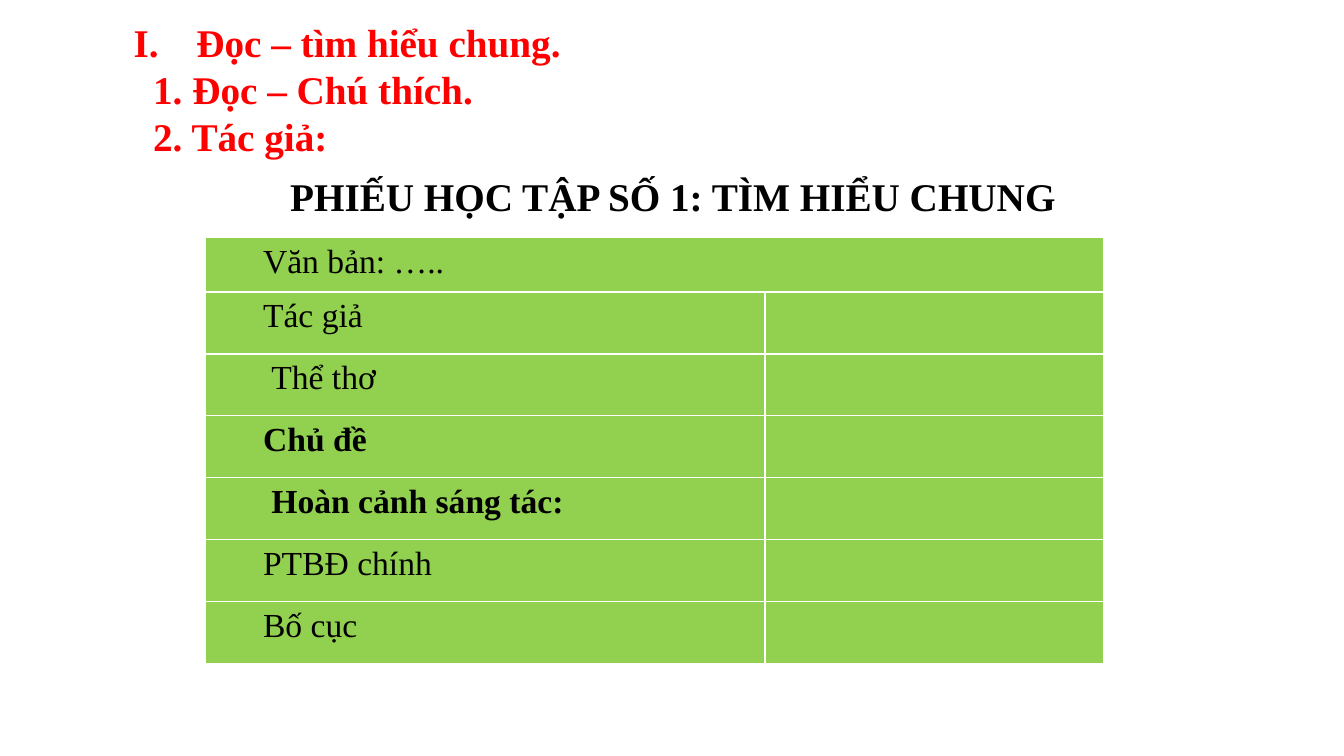
from lxml.etree import SubElement
from pptx import Presentation
from pptx.dml.color import RGBColor
from pptx.enum.text import MSO_ANCHOR as Anchor, MSO_AUTO_SIZE as AutoSize, PP_ALIGN as Align
from pptx.oxml.ns import qn
from pptx.util import Cm, Pt


def color(value):
    return RGBColor.from_string(value)


def add_span(para, text, size, ink, bold):
    span = para.add_run()
    span.text = text
    span.font.name = "Times New Roman"
    span.font.size = Pt(size)
    span.font.bold = bold
    span.font.color.rgb = color(ink)


deck = Presentation()
deck.slide_width, deck.slide_height = Cm(33.87), Cm(19.05)
page = deck.slides.add_slide(deck.slide_layouts[5])

# Worksheet title
title = page.shapes.title
title.left, title.top, title.width, title.height = Cm(7.06), Cm(4.22), Cm(19.89), Cm(1.45)
frame = title.text_frame
frame.word_wrap = True
frame.auto_size = AutoSize.NONE
frame.vertical_anchor = Anchor.TOP
frame.paragraphs[0].alignment = Align.LEFT
add_span(frame.paragraphs[0], "PHIẾU HỌC TẬP SỐ 1: TÌM HIỂU CHUNG", 28, "000000", True)

# Worksheet table: label, bold, extra indent in cm
labels = [
    ("Văn bản: …..", False, 0),
    ("Tác giả", False, 0),
    ("Thể thơ", False, 0.21),
    ("Chủ đề", True, 0),
    ("Hoàn cảnh sáng tác:", True, 0.21),
    ("PTBĐ chính", False, 0),
    ("Bố cục", False, 0),
]
table = page.shapes.add_table(len(labels), 2, Cm(5.18), Cm(5.99), Cm(22.64), Cm(10.73)).table
table.columns[0].width, table.columns[1].width = Cm(14.1), Cm(8.54)
for row_index, (label, bold, extra) in enumerate(labels):
    table.rows[row_index].height = Cm(1.56 if row_index else 1.37)
    for cell in table.rows[row_index].cells:
        properties = cell._tc.get_or_add_tcPr()
        for side in ("a:lnL", "a:lnR", "a:lnT", "a:lnB"):
            border = SubElement(properties, qn(side), w=str(Pt(1)))
            SubElement(SubElement(border, qn("a:solidFill")), qn("a:srgbClr"), val="FFFFFF")
        cell.fill.solid()
        cell.fill.fore_color.rgb = color("92D050")
    cell = table.cell(row_index, 0)
    cell.margin_left = cell.margin_right = Cm(0.18)
    cell.margin_top = cell.margin_bottom = Cm(0)
    para = cell.text_frame.paragraphs[0]
    para.line_spacing = 1.15
    para._p.get_or_add_pPr().set("marL", str(Cm(1.27 + extra)))
    add_span(para, label, 24, "000000", bold)
table.cell(0, 0).merge(table.cell(0, 1))

# Section outline
box = page.shapes.add_textbox(Cm(3.12), Cm(0.33), Cm(13.87), Cm(3.84))
frame = box.text_frame
frame.word_wrap = True
outline = ["Đọc – tìm hiểu chung.", "1. Đọc – Chú thích.", "2. Tác giả:"]
for index, text in enumerate(outline):
    para = frame.add_paragraph() if index else frame.paragraphs[0]
    add_span(para, text, 28, "FF0000", True)
    para._p.get_or_add_pPr().set("marL", str(Cm(0.49 if index else 1.58)))

# Roman numeral on the first line
numbered = frame.paragraphs[0]._p.get_or_add_pPr()
numbered.set("indent", str(Cm(-1.58)))
SubElement(numbered, qn("a:buFont"), typeface="+mj-lt")
SubElement(numbered, qn("a:buAutoNum"), type="romanUcPeriod")

deck.save("out.pptx")
